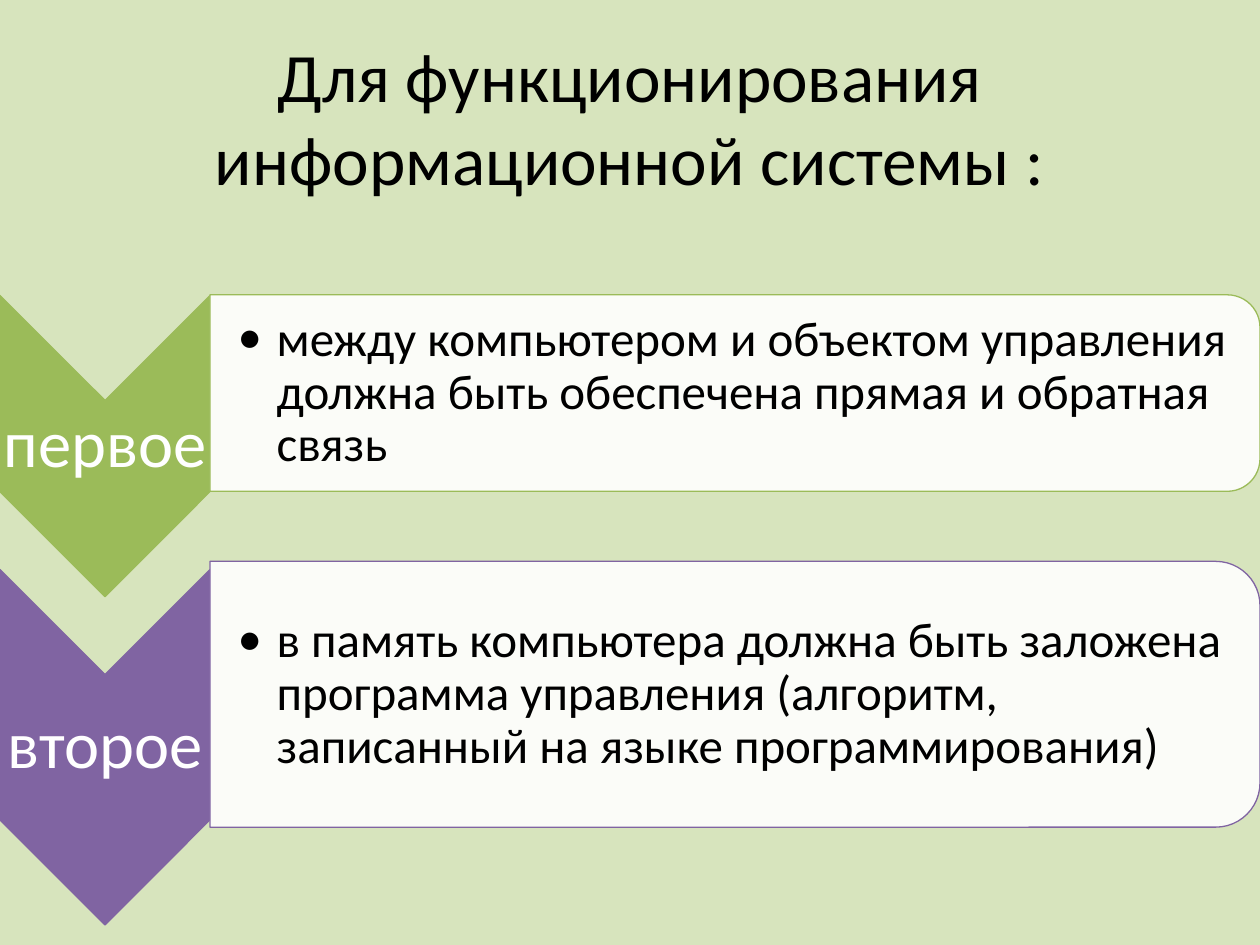
from lxml.etree import SubElement
from pptx import Presentation
from pptx.dml.color import RGBColor
from pptx.enum.shapes import MSO_SHAPE
from pptx.enum.text import MSO_ANCHOR, PP_ALIGN
from pptx.oxml.ns import qn
from pptx.util import Inches, Pt

BACK = RGBColor(0xD7, 0xE4, 0xBD)
GREEN = RGBColor(0x9B, 0xBB, 0x59)
PURPLE = RGBColor(0x80, 0x64, 0xA2)
WHITE = RGBColor(0xFF, 0xFF, 0xFF)
BLACK = RGBColor(0, 0, 0)

WIDE, HIGH = 10, 7.5
COL = WIDE / 6  # the arrows take one column, the panels five

deck = Presentation()
deck.slide_width, deck.slide_height = Inches(WIDE), Inches(HIGH)
slide = deck.slides.add_slide(deck.slide_layouts[6])
slide.background.fill.solid()
slide.background.fill.fore_color.rgb = BACK


def add_turned(kind, left, mid, width, height, fill, line):
    """Add a shape turned by 90 degrees; width and height are as seen."""
    shape = slide.shapes.add_shape(
        kind, Inches(left + (width - height) / 2), Inches(mid - width / 2),
        Inches(height), Inches(width))
    shape.rotation = 90
    shape.shadow.inherit = False
    shape.fill.solid()
    shape.fill.fore_color.rgb = fill
    shape.line.color.rgb = line
    shape.line.width = Pt(0.75)
    return shape


def add_text(text, left, mid, width, height, size, color, pads):
    """Add a text box centred on the height mid and return its paragraph."""
    box = slide.shapes.add_textbox(
        Inches(left), Inches(mid - height / 2), Inches(width), Inches(height))
    frame = box.text_frame
    frame.word_wrap = True
    frame.vertical_anchor = MSO_ANCHOR.MIDDLE
    frame.margin_left = Inches(pads[0])
    frame.margin_right = frame.margin_top = frame.margin_bottom = Inches(pads[1])
    para = frame.paragraphs[0]
    para.text = text
    para.font.name = "Calibri"
    para.font.size = Pt(size)
    para.font.color.rgb = color
    return para


# Title
title = add_text("Для функционирования информационной системы :",
                 0.21, 0.92, 9.53, 1.25, 39.6, BLACK, (0.1, 0.05))
title.alignment = PP_ALIGN.CENTER

# Rows: label, text, colour, arrow middle and height, panel middle and height
rows = [
    ("первое",
     "между компьютером и объектом управления должна быть обеспечена "
     "прямая и обратная связь",
     GREEN, 3.54, 2.39, 3.12, 1.56),
    ("второе",
     "в память компьютера должна быть заложена программа управления "
     "(алгоритм, записанный на языке программирования)",
     PURPLE, 5.93, 2.82, 5.51, 2.11),
]
for label, text, color, tip, tall, mid, high in rows:
    # Arrow with its label
    add_turned(MSO_SHAPE.CHEVRON, 0, tip, COL, tall, color, color)
    name = add_text(label, 0, tip, COL, tall - COL, 38, WHITE, (0, 0))
    name.alignment = PP_ALIGN.CENTER
    name.line_spacing = 0.9

    # Panel, nearly opaque
    panel = add_turned(MSO_SHAPE.ROUND_2_SAME_RECTANGLE, COL, mid,
                       WIDE - COL, high, WHITE, color)
    tint = panel.fill._xPr.find(qn("a:solidFill"))[0]
    SubElement(tint, qn("a:alpha"), val="90000")

    # Bulleted text
    point = add_text(text, COL, mid, 8.23, high * 0.9, 28, BLACK, (0.22, 0.02))
    point.line_spacing = 0.9
    props = point._p.get_or_add_pPr()
    props.set("marL", str(Inches(0.31)))
    props.set("indent", str(-Inches(0.31)))
    first = props.find(qn("a:defRPr"))
    for tag, key, value in (("a:buFont", "typeface", "Calibri"),
                            ("a:buChar", "char", "•")):
        first.addprevious(props.makeelement(qn(tag), {key: value}))

deck.save("out.pptx")
